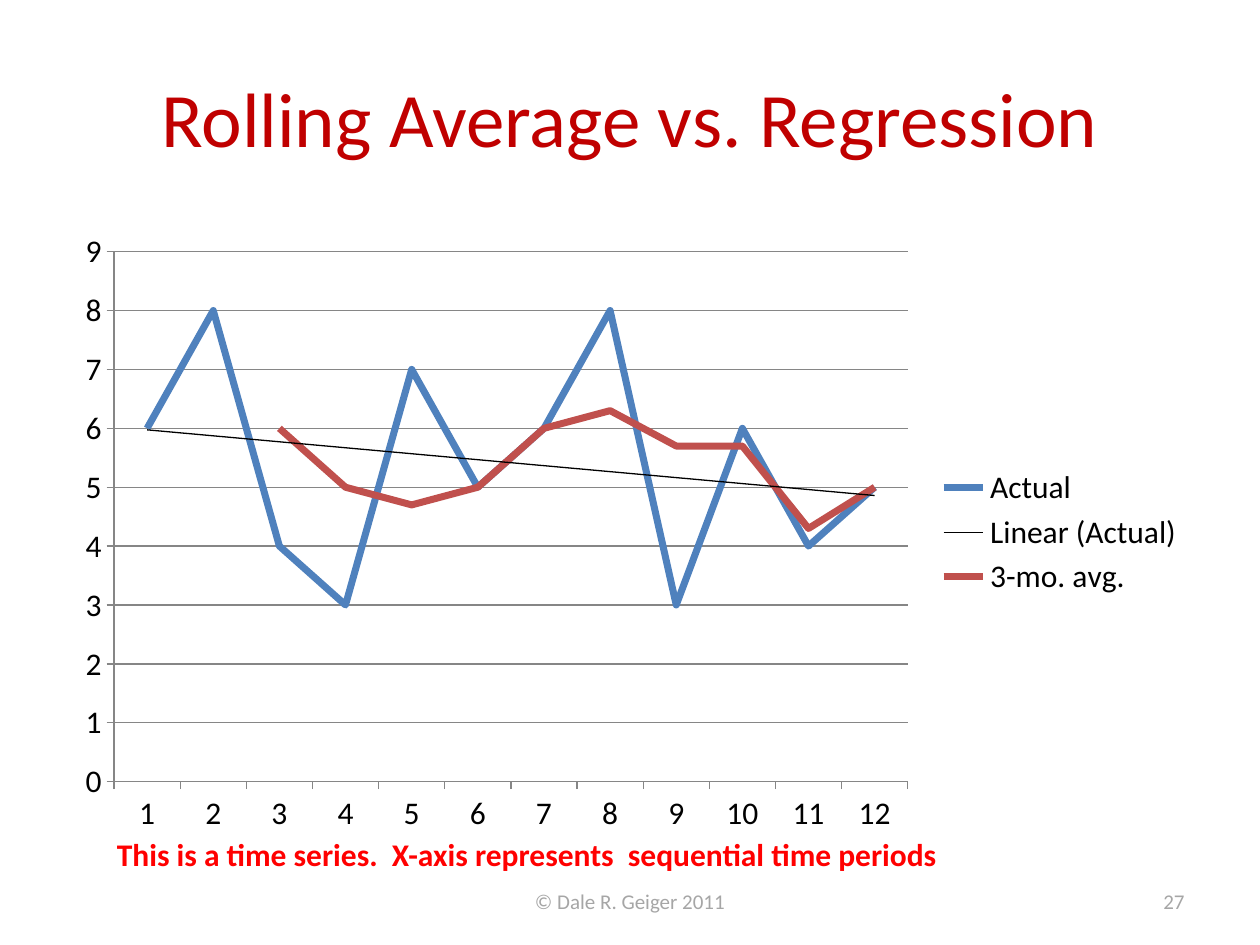
from lxml import etree
from pptx import Presentation
from pptx.chart.data import CategoryChartData
from pptx.dml.color import RGBColor
from pptx.enum.chart import XL_CHART_TYPE, XL_LEGEND_POSITION, XL_MARKER_STYLE, XL_TICK_MARK
from pptx.enum.text import MSO_ANCHOR, MSO_AUTO_SIZE, PP_ALIGN
from pptx.oxml import parse_xml
from pptx.oxml.ns import nsdecls, qn
from pptx.util import Inches, Pt

FONT = "Calibri"
TITLE_RED = RGBColor(0xC0, 0x00, 0x00)
NOTE_RED = RGBColor(0xFF, 0x00, 0x00)
FOOTER_GRAY = RGBColor(0xA6, 0xA6, 0xA6)
AXIS_GRAY = RGBColor(0x86, 0x86, 0x86)
BLACK = RGBColor(0x00, 0x00, 0x00)
ACTUAL_BLUE = RGBColor(0x4F, 0x81, 0xBD)
AVERAGE_RED = RGBColor(0xC0, 0x50, 0x4D)

ACTUAL = (6, 8, 4, 3, 7, 5, 6, 8, 3, 6, 4, 5)
ROLLING = (None, None, 6, 5, 4.7, 5, 6, 6.3, 5.7, 5.7, 4.3, 5)


def add_text(slide, box, text, size, color, align=PP_ALIGN.LEFT, bold=False, wrap=True):
    """Place one line of text in the box and return its frame."""
    frame = slide.shapes.add_textbox(*box).text_frame
    frame.word_wrap = wrap
    frame.vertical_anchor = MSO_ANCHOR.MIDDLE
    paragraph = frame.paragraphs[0]
    paragraph.text = text
    paragraph.alignment = align
    paragraph.font.name = FONT
    paragraph.font.size = Pt(size)
    paragraph.font.bold = bold
    paragraph.font.color.rgb = color
    return frame


def add_trendline(series):
    """Give the series a thin black linear trend line."""
    trendline = parse_xml(
        f'<c:trendline {nsdecls("c", "a")}>'
        f'<c:spPr><a:ln w="{Pt(0.75)}"><a:solidFill><a:srgbClr val="{BLACK}"/>'
        '</a:solidFill></a:ln></c:spPr><c:trendlineType val="linear"/>'
        '<c:dispRSqr val="0"/><c:dispEq val="0"/></c:trendline>'
    )
    series._element.find(qn("c:cat")).addprevious(trendline)


def set_plot_area(chart, **fractions):
    """Fix the inner plot area as fractions of the chart."""
    plot_area = chart._chartSpace.chart.plotArea
    for automatic in plot_area.findall(qn("c:layout")):
        plot_area.remove(automatic)
    layout = parse_xml(f'<c:layout {nsdecls("c")}><c:manualLayout/></c:layout>')
    settings = {"layoutTarget": "inner", "xMode": "edge", "yMode": "edge", **fractions}
    for name, value in settings.items():
        etree.SubElement(layout[0], qn(f"c:{name}")).set("val", str(value))
    plot_area.insert(0, layout)


def add_comparison_chart(slide, box):
    """Draw actual values, their trend and the rolling average in the box."""
    data = CategoryChartData()
    data.categories = [str(month) for month in range(1, 13)]
    data.add_series("Actual", ACTUAL)
    data.add_series("3-mo. avg.", ROLLING)
    chart = slide.shapes.add_chart(XL_CHART_TYPE.LINE, *box, data).chart
    chart.has_title = False
    chart.font.name = FONT
    chart.font.size = Pt(18)
    chart.font.color.rgb = BLACK
    chart.has_legend = True
    chart.legend.position = XL_LEGEND_POSITION.RIGHT
    chart.legend.include_in_layout = False

    plot = chart.plots[0]
    plot.vary_by_categories = False
    for series, color in zip(plot.series, (ACTUAL_BLUE, AVERAGE_RED)):
        series.smooth = False
        series.marker.style = XL_MARKER_STYLE.NONE
        series.format.line.width = Pt(4)
        series.format.line.color.rgb = color
    add_trendline(plot.series[0])

    value_axis = chart.value_axis
    value_axis.minimum_scale = 0
    value_axis.maximum_scale = 9
    value_axis.major_unit = 1
    value_axis.has_major_gridlines = True
    for axis in (chart.category_axis, value_axis):
        axis.major_tick_mark = XL_TICK_MARK.OUTSIDE
        axis.format.line.color.rgb = AXIS_GRAY
    value_axis.major_gridlines.format.line.color.rgb = AXIS_GRAY
    set_plot_area(chart, x=0.045, y=0.05, w=0.7, h=0.85)


def add_footer(slide, left, top, width, height):
    """Place the copyright line and the page number in the footer strip."""
    credit_width, number_width = Inches(3.17), Inches(2.33)
    credit_box = (left + (width - credit_width) // 2, top, credit_width, height)
    number_box = (left + width - number_width, top, number_width, height)
    add_text(slide, credit_box, "© Dale R. Geiger 2011", 12, FOOTER_GRAY, PP_ALIGN.CENTER)
    add_text(slide, number_box, "27", 12, FOOTER_GRAY, PP_ALIGN.RIGHT)


def main():
    """Build and save the slide."""
    presentation = Presentation()
    presentation.slide_width = Inches(10)
    presentation.slide_height = Inches(7.5)
    slide = presentation.slides.add_slide(presentation.slide_layouts[6])

    margin, content_width = Inches(0.5), Inches(9)
    title_box = (margin, Inches(0.3), content_width, Inches(1.25))
    add_text(slide, title_box, "Rolling Average vs. Regression", 44, TITLE_RED, PP_ALIGN.CENTER)
    add_comparison_chart(slide, (margin, Inches(1.75), content_width, Inches(4.95)))
    add_footer(slide, margin, Inches(6.95), content_width, Inches(0.4))
    note_box = (Inches(0.83), Inches(6.58), Inches(6.77), Inches(0.4))
    note = add_text(
        slide, note_box,
        "This is a time series.  X-axis represents  sequential time periods",
        18, NOTE_RED, bold=True, wrap=False,
    )
    note.auto_size = MSO_AUTO_SIZE.SHAPE_TO_FIT_TEXT
    presentation.save("out.pptx")


if __name__ == "__main__":
    main()
